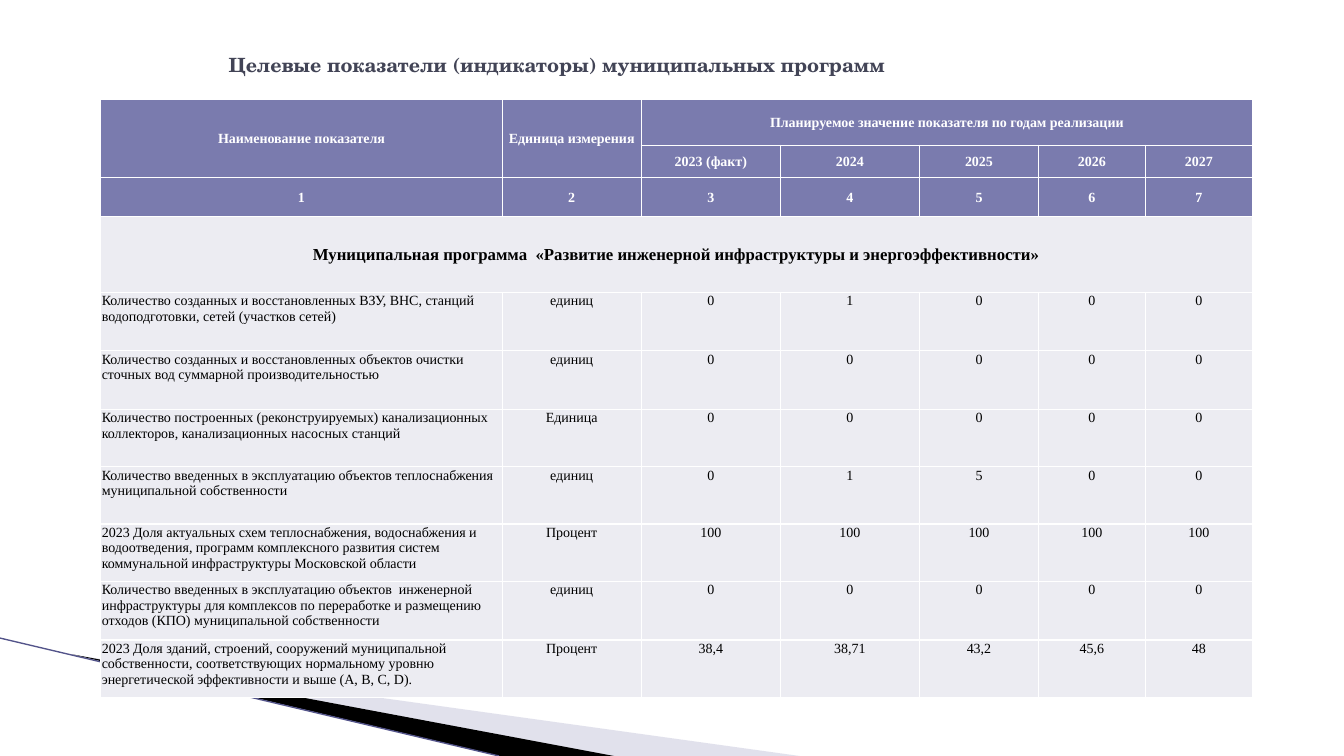
import pptx
import pptx.dml.color
import pptx.enum.shapes
import pptx.enum.text
import pptx.oxml
import pptx.oxml.ns
import pptx.util
from lxml import etree

Inches = pptx.util.Inches
ALIGN = pptx.enum.text.PP_ALIGN
ANCHOR = pptx.enum.text.MSO_ANCHOR
qn = pptx.oxml.ns.qn

TITLE = "Целевые показатели (индикаторы) муниципальных программ"
NAME, UNIT = "Наименование показателя", "Единица измерения"
PLAN = "Планируемое значение показателя по годам реализации"
YEARS = ["2023 (факт)", "2024", "2025", "2026", "2027"]
PROGRAM = "Муниципальная программа  «Развитие инженерной инфраструктуры и энергоэффективности»"
INDICATORS = [
    ("Количество созданных и восстановленных ВЗУ, ВНС, станций водоподготовки, сетей (участков сетей)",
     "единиц", "0", "1", "0", "0", "0"),
    ("Количество созданных и восстановленных объектов очистки сточных вод суммарной производительностью",
     "единиц", "0", "0", "0", "0", "0"),
    ("Количество построенных (реконструируемых) канализационных коллекторов, канализационных насосных станций",
     "Единица", "0", "0", "0", "0", "0"),
    ("Количество введенных в эксплуатацию объектов теплоснабжения муниципальной собственности",
     "единиц", "0", "1", "5", "0", "0"),
    ("2023 Доля актуальных схем теплоснабжения, водоснабжения и водоотведения, программ комплексного "
     "развития систем коммунальной инфраструктуры Московской области",
     "Процент", "100", "100", "100", "100", "100"),
    ("Количество введенных в эксплуатацию объектов  инженерной инфраструктуры для комплексов по "
     "переработке и размещению отходов (КПО) муниципальной собственности",
     "единиц", "0", "0", "0", "0", "0"),
    ("2023 Доля зданий, строений, сооружений муниципальной собственности, соответствующих нормальному "
     "уровню энергетической эффективности и выше (А, B, C, D).",
     "Процент", "38,4", "38,71", "43,2", "45,6", "48"),
]
COLUMN_WIDTHS = [3.98, 1.38, 1.38, 1.38, 1.18, 1.06, 1.06]
ROW_HEIGHTS = [0.45, 0.32, 0.39, 0.75, 0.58, 0.58, 0.57, 0.57, 0.57, 0.58, 0.57]
MERGES = [(0, 0, 1, 0), (0, 1, 1, 1), (0, 2, 0, 6), (3, 0, 3, 6)]
HEADER_ROWS, PROGRAM_ROW = 3, 3
WEDGES = [
    ([(0.73, 6.5), (7.93, 7.5), (6.08, 7.5)], "B6B6D1", 40),
    ([(0.71, 6.49), (6.09, 7.5), (4.96, 7.5)], "000000", 100),
]


def color(value):
    return pptx.dml.color.RGBColor.from_string(value)


def write(frame, text, size=10, font="Times New Roman", fill="000000", bold=False,
          align=ALIGN.CENTER):
    paragraph = frame.paragraphs[0]
    paragraph.alignment = align
    run = paragraph.add_run()
    run.text = text
    run.font.size = pptx.util.Pt(size)
    run.font.name = font
    run.font.bold = bold
    run.font.color.rgb = color(fill)


def add_wedge(points, fill, opacity):
    corners = [(Inches(x), Inches(y)) for x, y in points]
    builder = slide.shapes.build_freeform(*corners[0])
    builder.add_line_segments(corners[1:], close=True)
    wedge = builder.convert_to_shape()
    wedge.shadow.inherit = False
    wedge.line.fill.background()
    wedge.fill.solid()
    wedge.fill.fore_color.rgb = color(fill)
    if opacity < 100:
        tone = wedge.fill._xPr.find(".//" + qn("a:srgbClr"))
        etree.SubElement(tone, qn("a:alpha"), val=str(opacity * 1000))


def style_cell(cell, fill, anchor):
    cell.margin_left = cell.margin_right = cell.margin_top = Inches(0.01)
    cell.margin_bottom = 0
    cell.vertical_anchor = anchor
    cell.fill.solid()
    cell.fill.fore_color.rgb = color(fill)
    properties = cell._tc.get_or_add_tcPr()
    for position, side in enumerate(("a:lnL", "a:lnR", "a:lnT", "a:lnB")):
        border = etree.Element(qn(side), w="12700")
        paint = etree.SubElement(border, qn("a:solidFill"))
        etree.SubElement(paint, qn("a:srgbClr"), val="FFFFFF")
        properties.insert(position, border)


presentation = pptx.Presentation()
presentation.slide_width = Inches(13.33)
presentation.slide_height = Inches(7.5)
slide = presentation.slides.add_slide(presentation.slide_layouts[6])

for wedge_spec in WEDGES:
    add_wedge(*wedge_spec)

edge = slide.shapes.add_connector(pptx.enum.shapes.MSO_CONNECTOR.STRAIGHT,
                                  Inches(0), Inches(6.33), Inches(4.95), Inches(7.5))
edge.line.color.rgb = color("53548A")
edge.line.width = pptx.util.Pt(0.95)
etree.SubElement(edge._element.spPr, qn("a:effectLst"))

title = slide.shapes.add_textbox(Inches(2.17), Inches(0.3), Inches(9), Inches(0.69)).text_frame
title.word_wrap = True
title.vertical_anchor = ANCHOR.MIDDLE
write(title, TITLE, size=14, font="TeX Gyre Schola", fill="424456", bold=True, align=ALIGN.LEFT)

rows = [
    [NAME, UNIT, PLAN],
    ["", ""] + YEARS,
    [str(number + 1) for number in range(len(COLUMN_WIDTHS))],
    [PROGRAM],
    *INDICATORS,
]
indicators = slide.shapes.add_table(
    len(ROW_HEIGHTS), len(COLUMN_WIDTHS), Inches(1), Inches(0.99),
    Inches(sum(COLUMN_WIDTHS)), Inches(sum(ROW_HEIGHTS))).table
indicators.first_row = indicators.horz_banding = False
for column, width in zip(indicators.columns, COLUMN_WIDTHS):
    column.width = Inches(width)
for row, height in zip(indicators.rows, ROW_HEIGHTS):
    row.height = Inches(height)

for r, texts in enumerate(rows):
    header = r < HEADER_ROWS
    heading = r <= PROGRAM_ROW
    for c in range(len(COLUMN_WIDTHS)):
        cell = indicators.cell(r, c)
        style_cell(cell, "7A7BAE" if header else "ECECF2",
                   ANCHOR.MIDDLE if heading else ANCHOR.TOP)
        if c < len(texts) and texts[c]:
            write(cell.text_frame, texts[c], size=12 if r == PROGRAM_ROW else 10,
                  fill="FFFFFF" if header else "000000", bold=heading,
                  align=ALIGN.CENTER if heading or c else ALIGN.LEFT)

for top, left, bottom, right in MERGES:
    indicators.cell(top, left).merge(indicators.cell(bottom, right))

presentation.save("out.pptx")
